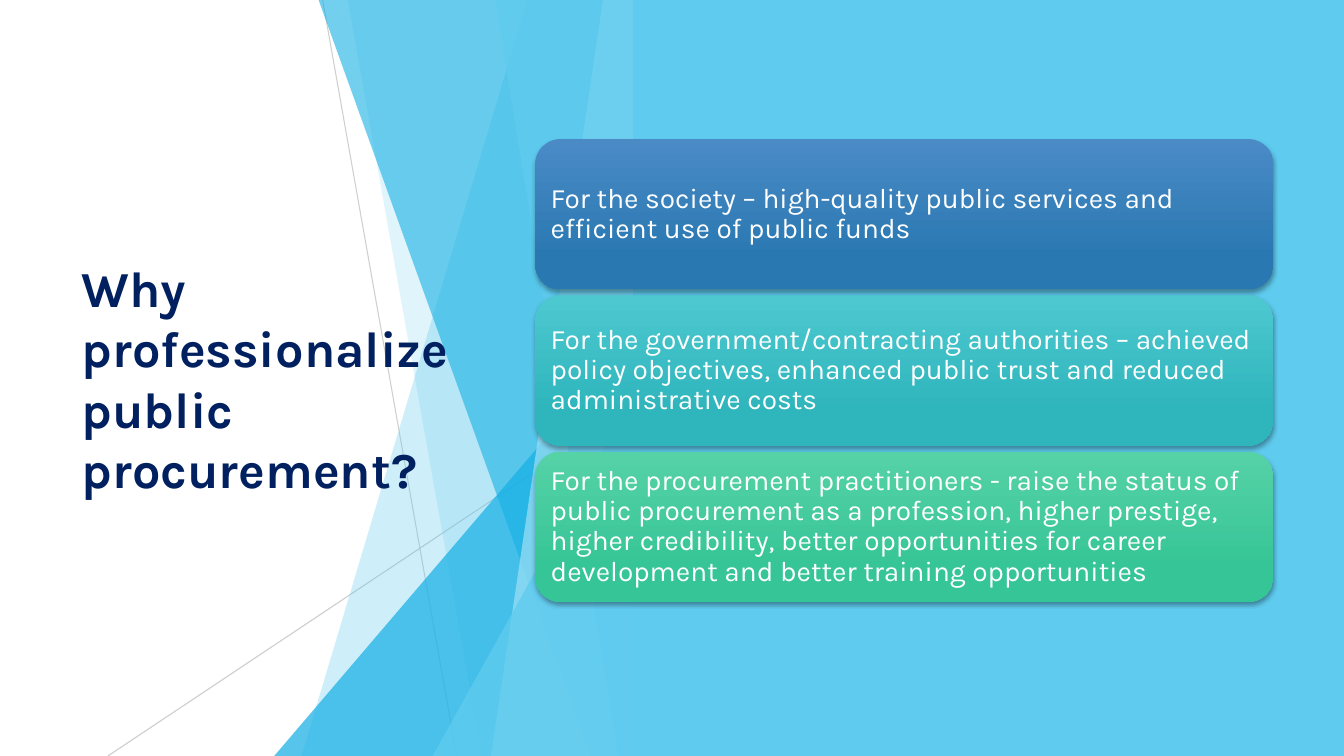
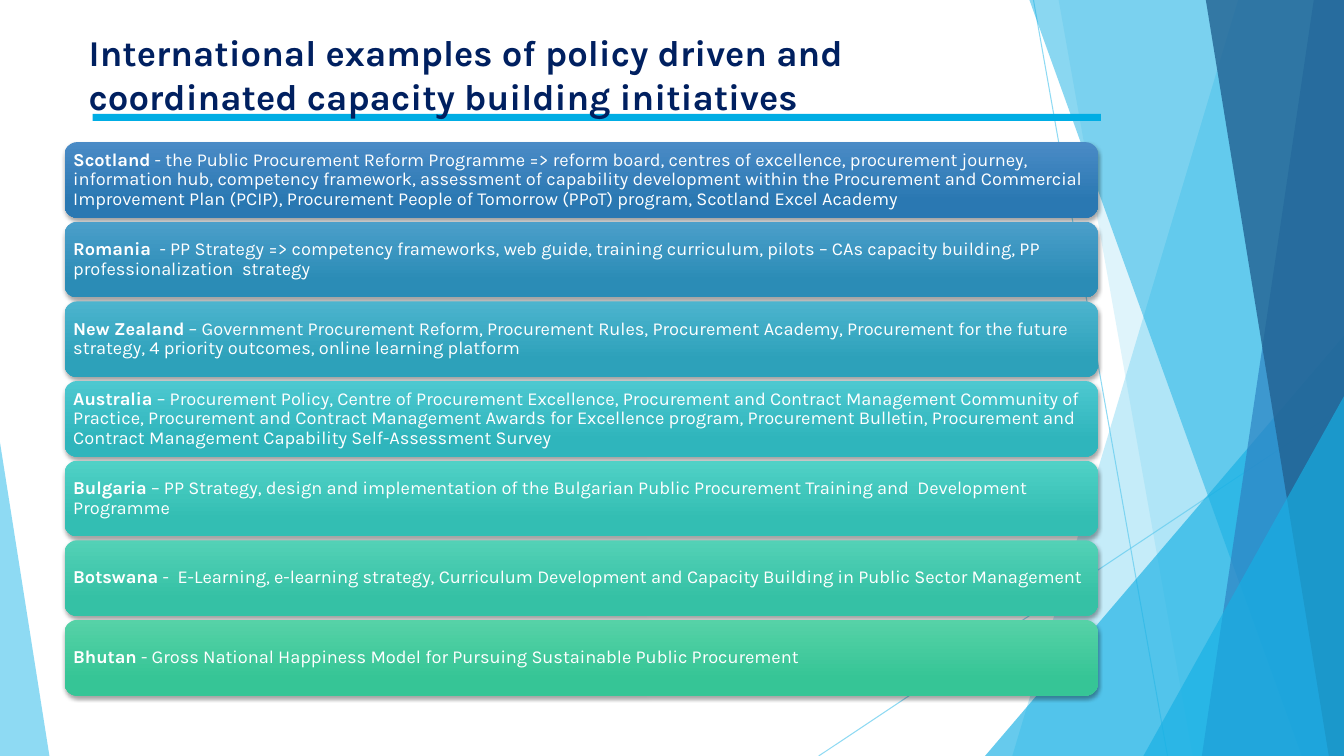
from lxml import etree
from pptx import Presentation
from pptx.dml.color import RGBColor
from pptx.enum.shapes import MSO_CONNECTOR, MSO_SHAPE
from pptx.enum.text import MSO_ANCHOR, MSO_AUTO_SIZE, PP_ALIGN
from pptx.oxml.ns import qn
from pptx.util import Inches, Pt

FONT = "Karla"
WHITE, NAVY, SKY, PALE = "FFFFFF", "002060", "5FCBEF", "9FE0F5"
AZURE, BLUE, DEEP, RULE, GREY = "17B0E4", "2E83C3", "226292", "00ADE4", "BFBFBF"
WIDTH, HEIGHT = 13.33, 7.5

GRADIENTS = [
    ("4A8BC6", "2A78B2"),
    ("4B9FCA", "2B8CB6"),
    ("4CB4CE", "2DA1BA"),
    ("4DC8D0", "2FB5BC"),
    ("50D1C6", "33BEB3"),
    ("53D1B6", "35C1A5"),
    ("56D2A7", "36C596"),
]

FACETS = [
    ("line", (10.25, 0), (11.58, 7.5)),
    ("line", (13.33, 4.03), (8.12, 7.5)),
    ("band", 12.28, 10.04),
    ("band", 10.5, 11.83),
    ("triangle", 9.77, 3.33),
    ("band", 10.21, 12.91),
    ("band", 13.03, 11.92),
    ("band", 11.96, 13.18),
    ("triangle", 11.34, 3.93),
]
LIGHT_TINTS = [(GREY, 75), (GREY, 80), (SKY, 30), (SKY, 20), (AZURE, 72),
               (AZURE, 60), (PALE, 70), (SKY, 65), (SKY, 80)]
DARK_TINTS = [(SKY, 70), (SKY, 70), (SKY, 36), (SKY, 20), (AZURE, 66),
              (AZURE, 50), (BLUE, 70), (DEEP, 80), (AZURE, 66)]

WHY_TITLE = "Why professionalize public procurement?"
BENEFITS = [
    ("", "For the society – high-quality public services and efficient use of public funds"),
    ("", "For the government/contracting authorities – achieved policy objectives, "
         "enhanced public trust and reduced administrative costs"),
    ("", "For the procurement practitioners - raise the status of public procurement as a "
         "profession, higher prestige, higher credibility, better opportunities for career "
         "development and better training opportunities"),
]

EXAMPLES_TITLE = ("International examples of policy driven and coordinated "
                  "capacity building initiatives")
COUNTRIES = [
    ("Scotland", " - the Public Procurement Reform Programme => reform board, centres of "
     "excellence, procurement journey, information hub, competency framework, assessment of "
     "capability development within the Procurement and Commercial Improvement Plan (PCIP), "
     "Procurement People of Tomorrow (PPoT) program, Scotland Excel Academy"),
    ("Romania", "  - PP Strategy => competency frameworks, web guide, training curriculum, "
     "pilots – CAs capacity building, PP professionalization  strategy"),
    ("New Zealand", " – Government Procurement Reform, Procurement Rules, Procurement Academy, "
     "Procurement for the future strategy, 4 priority outcomes, online learning platform"),
    ("Australia", " – Procurement Policy, Centre of Procurement Excellence, Procurement and "
     "Contract Management Community of Practice, Procurement and Contract Management Awards "
     "for Excellence program, Procurement Bulletin, Procurement and Contract Management "
     "Capability Self-Assessment Survey"),
    ("Bulgaria", " – PP Strategy, design and implementation of the Bulgarian Public "
     "Procurement Training and  Development Programme"),
    ("Botswana", " -  E-Learning, e-learning strategy, Curriculum Development and Capacity "
     "Building in Public Sector Management"),
    ("Bhutan", " - Gross National Happiness Model for Pursuing Sustainable Public Procurement"),
]


def rgb(value):
    return RGBColor.from_string(value)


def set_alpha(shape, percent):
    colour = next(shape.element.spPr.iter(qn("a:srgbClr")))
    etree.SubElement(colour, qn("a:alpha")).set("val", str(percent * 1000))


def paint(shape, colour, alpha=100):
    shape.shadow.inherit = False
    shape.fill.solid()
    shape.fill.fore_color.rgb = rgb(colour)
    shape.line.fill.background()
    if alpha < 100:
        set_alpha(shape, alpha)


def add_block(slide, preset, left, top, width, height):
    return slide.shapes.add_shape(
        preset, Inches(left), Inches(top), Inches(width), Inches(height))


def add_triangle(slide, left, top, width, apex, colour, alpha):
    triangle = add_block(slide, MSO_SHAPE.ISOSCELES_TRIANGLE, left, top, width, HEIGHT - top)
    triangle.adjustments[0] = apex
    paint(triangle, colour, alpha)


def add_facet_line(slide, start, end, shift, colour, alpha):
    line = slide.shapes.add_connector(
        MSO_CONNECTOR.STRAIGHT, Inches(start[0] + shift), Inches(start[1]),
        Inches(end[0] + shift), Inches(end[1]))
    line.line.width = Pt(0.75)
    line.line.color.rgb = rgb(colour)
    set_alpha(line, alpha)
    etree.SubElement(line.element.spPr, qn("a:effectLst"))


def add_band(slide, top_x, bottom_x, right, colour, alpha):
    outline = slide.shapes.build_freeform(Inches(top_x), 0)
    outline.add_line_segments([(Inches(x), Inches(y)) for x, y in (
        (right, 0), (right, HEIGHT), (bottom_x, HEIGHT))], close=True)
    paint(outline.convert_to_shape(), colour, alpha)


def add_facets(slide, right, tints):
    shift = right - WIDTH
    for (kind, first, second), (colour, alpha) in zip(FACETS, tints):
        if kind == "line":
            add_facet_line(slide, first, second, shift, colour, alpha)
        elif kind == "band":
            add_band(slide, first + shift, second + shift, right, colour, alpha)
        else:
            add_triangle(slide, first + shift, second, WIDTH - first, 1, colour, alpha)


def add_run(paragraph, text, size, colour, bold):
    run = paragraph.add_run()
    run.text = text
    run.font.name = FONT
    run.font.size = Pt(size)
    run.font.bold = bold
    run.font.color.rgb = rgb(colour)


def place_title(slide, text, box, size, anchor):
    title = slide.shapes.title
    title.left, title.top, title.width, title.height = map(Inches, box)
    frame = title.text_frame
    frame.word_wrap = True
    frame.auto_size = MSO_AUTO_SIZE.NONE
    frame.vertical_anchor = anchor
    paragraph = frame.paragraphs[0]
    paragraph.alignment = PP_ALIGN.LEFT
    add_run(paragraph, text, size, NAVY, True)
    title.element.getparent().append(title.element)


def add_shadow(shape):
    shape.shadow.inherit = False
    effects = shape.element.spPr.find(qn("a:effectLst"))
    shadow = etree.SubElement(effects, qn("a:outerShdw"), blurRad=str(Pt(3)),
                              dist=str(Pt(2)), dir="5400000", rotWithShape="0")
    colour = etree.SubElement(shadow, qn("a:srgbClr"), val="000000")
    etree.SubElement(colour, qn("a:alpha"), val="35000")


def add_card(slide, box, gradient, inset, size, lead, detail):
    card = add_block(slide, MSO_SHAPE.ROUNDED_RECTANGLE, *box)
    card.fill.gradient()
    card.fill.gradient_angle = 270
    for stop, colour, position in zip(card.fill.gradient_stops, gradient, (0, 0.78)):
        stop.color.rgb = rgb(colour)
        stop.position = position
    card.line.fill.background()
    add_shadow(card)
    frame = card.text_frame
    frame.word_wrap = True
    frame.vertical_anchor = MSO_ANCHOR.MIDDLE
    frame.margin_left = frame.margin_right = Inches(inset)
    frame.margin_top = frame.margin_bottom = Inches(inset)
    paragraph = frame.paragraphs[0]
    paragraph.alignment = PP_ALIGN.LEFT
    paragraph.line_spacing = 0.9
    if lead:
        add_run(paragraph, lead, size, WHITE, True)
    add_run(paragraph, detail, size, WHITE, False)


def add_cards(slide, entries, box, pitch, inset, size):
    left, top, width, height = box
    step = (len(GRADIENTS) - 1) // (len(entries) - 1)
    for index, (lead, detail) in enumerate(entries):
        add_card(slide, (left, top + index * pitch, width, height),
                 GRADIENTS[index * step], inset, size, lead, detail)


def build_why(slide):
    panel_left = 6.28
    add_facets(slide, panel_left, LIGHT_TINTS)
    panel = add_block(slide, MSO_SHAPE.RECTANGLE, panel_left, 0, WIDTH - panel_left, HEIGHT)
    paint(panel, SKY)
    place_title(slide, WHY_TITLE, (0.71, 1.51, 3.88, 4.48), 36, MSO_ANCHOR.MIDDLE)
    add_cards(slide, BENEFITS, (5.31, 1.38, 7.32, 1.49), 1.55, 0.08, 20)


def build_examples(slide):
    add_facets(slide, WIDTH, DARK_TINTS)
    add_triangle(slide, 0, 4.39, 0.49, 0, SKY, 70)
    paint(add_block(slide, MSO_SHAPE.RECTANGLE, 0.92, 1.13, 10, 0.07), RULE)
    place_title(slide, EXAMPLES_TITLE, (0.78, 0.25, 9.4, 1.44), 26, MSO_ANCHOR.TOP)
    add_cards(slide, COUNTRIES, (0.64, 1.41, 10.25, 0.75), 0.79, 0.05, 13)


def main():
    deck = Presentation()
    deck.slide_width, deck.slide_height = Inches(WIDTH), Inches(HEIGHT)
    title_only = deck.slide_layouts[5]
    for build in (build_why, build_examples):
        build(deck.slides.add_slide(title_only))
    deck.save("out.pptx")


if __name__ == "__main__":
    main()
